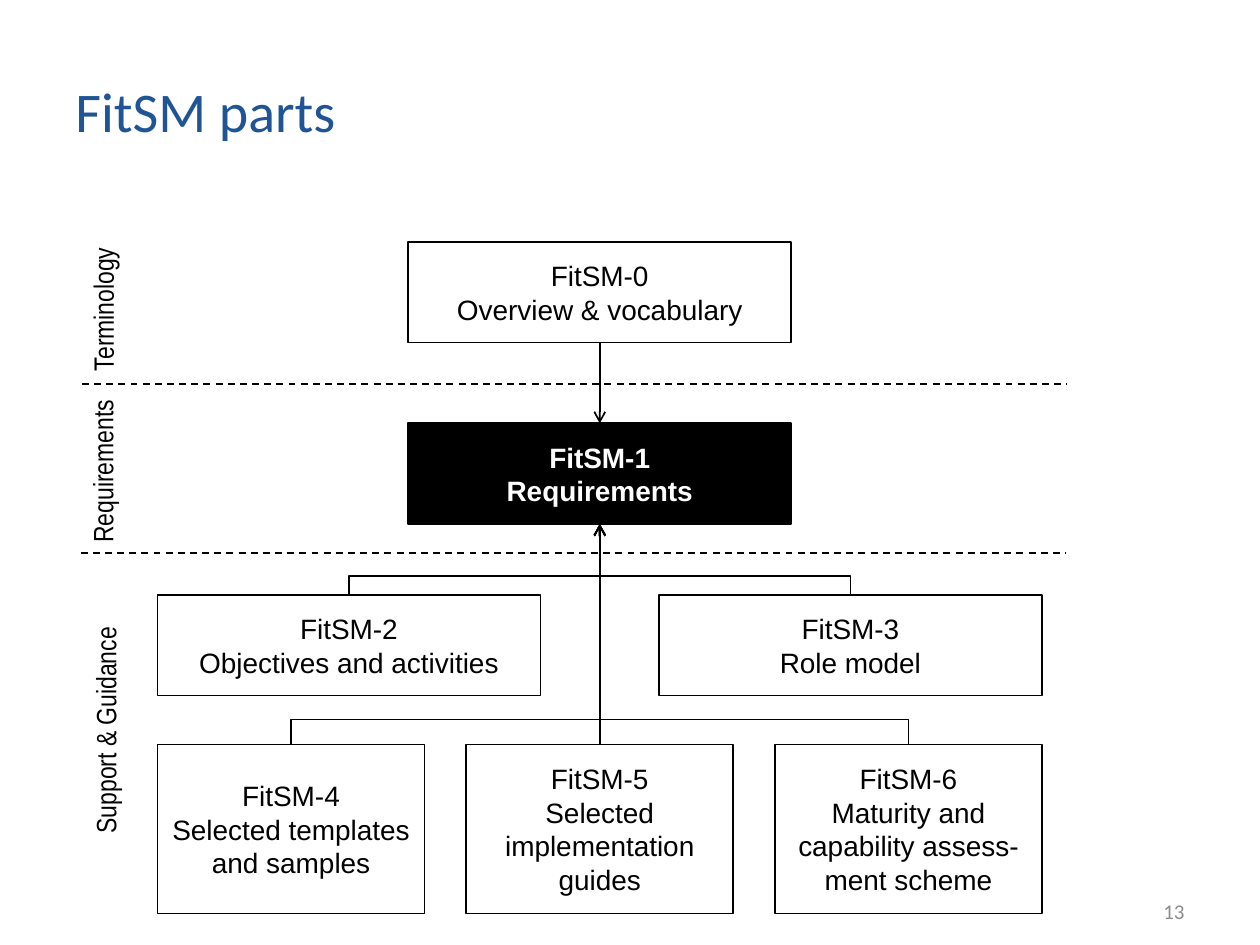
from dataclasses import dataclass

from lxml.etree import SubElement
from pptx import Presentation
from pptx.dml.color import RGBColor as Rgb
from pptx.enum.dml import MSO_LINE as Dash
from pptx.enum.shapes import MSO_CONNECTOR as Conn, MSO_SHAPE as Shape
from pptx.enum.text import MSO_ANCHOR as Anchor, PP_ALIGN as Align
from pptx.oxml.ns import qn
from pptx.util import Pt

TOP, BOTTOM = 0, 2  # connection sites of a rectangle


@dataclass(frozen=True)
class Theme:
    ink: str = "000000"
    paper: str = "FFFFFF"
    blue: str = "205595"
    gray: str = "8C8C8C"
    head: int = 32
    body: int = 16
    small: int = 12
    sans: str = "Arial"
    thin: str = "Arial Narrow"
    title: str = "Calibri"


T = Theme()


def px(n):
    """One px is a hundredth of an inch."""
    return round(n * 9144)


def write(shape, text, size=T.body, font=T.sans, color=T.ink, bold=False,
          align=Align.CENTER, wrap=True):
    frame = shape.text_frame
    frame.word_wrap = wrap
    frame.vertical_anchor = Anchor.MIDDLE
    frame.text = text
    for para in frame.paragraphs:
        para.alignment = align
        style = para.font
        style.size, style.name, style.bold = Pt(size), font, bold
        style.color.rgb = Rgb.from_string(color)


def label(slide, box, text, turn=0, **form):
    shape = slide.shapes.add_textbox(*map(px, box))
    shape.rotation = turn
    write(shape, text, **form)


def card(slide, box, text, dark=False):
    shape = slide.shapes.add_shape(Shape.RECTANGLE, *map(px, box))
    shape.shadow.inherit = False
    if dark:
        shape.fill.solid()
        shape.fill.fore_color.rgb = Rgb.from_string(T.ink)
    else:
        shape.fill.background()
    shape.line.color.rgb = Rgb.from_string(T.ink)
    shape.line.width = Pt(1)
    write(shape, text, color=T.paper if dark else T.ink, bold=dark)
    return shape


def row(slide, box, texts, wide):
    """Cards of equal width, spread evenly from edge to edge."""
    x, y, w, h = box
    step = (w - wide) // (len(texts) - 1)
    return [card(slide, (x + i * step, y, wide, h), text)
            for i, text in enumerate(texts)]


def side(slide, box, text, long):
    """A label that reads upward, centred in its box."""
    x, y, w, h = box
    high = 37
    spot = (x + (w - long) / 2, y + (h - high) / 2, long, high)
    label(slide, spot, text, turn=270, font=T.thin, wrap=False)


def line(slide, kind, ends=(0, 0, 0, 0)):
    wire = slide.shapes.add_connector(kind, *map(px, ends))
    wire.line.color.rgb = Rgb.from_string(T.ink)
    wire.line.width = Pt(1)
    SubElement(wire._element.spPr, qn("a:effectLst"))
    return wire


def rule(slide, x, y, w):
    line(slide, Conn.STRAIGHT, (x, y, x + w, y)).line.dash_style = Dash.DASH


def arrow(slide, start, out, end, into, kind=Conn.STRAIGHT):
    wire = line(slide, kind)
    wire.begin_connect(start, out)
    wire.end_connect(end, into)
    SubElement(wire.line._get_or_add_ln(), qn("a:tailEnd"), type="arrow")
    return wire


def elbow(slide, start, end, lift):
    """Rise by lift, cross to the middle of end, then rise to its base."""
    wire = arrow(slide, start, TOP, end, BOTTOM, Conn.ELBOW)
    x1, y1, x2, y2 = wire.begin_x, wire.begin_y, wire.end_x, wire.end_y
    long, across = y1 - y2, abs(x2 - x1)
    # The bent preset starts sideways, so its frame is turned
    wire.left = (x1 + x2 - long) // 2
    wire.top = (y1 + y2 - across) // 2
    wire.width, wire.height = long, across
    right = x1 < x2
    frame = wire._element.spPr.find(qn("a:xfrm"))
    frame.set("rot", str((90 if right else 270) * 60000))
    frame.set("flipH", str(int(right)))
    frame.set("flipV", "1")
    bend = wire._element.spPr.find(qn("a:prstGeom")).find(qn("a:avLst"))
    share = round(px(lift) / long * 100000)
    SubElement(bend, qn("a:gd"), name="adj1", fmla=f"val {share}")


def terms(slide, box):
    x, y, w, h = box
    side(slide, (x, y, 35, 107), "Terminology", 119)
    rule(slide, x + 1, y + h, w)
    return card(slide, (x + 260, y, 304, 80), "FitSM-0\nOverview & vocabulary")


def needs(slide, box):
    x, y, w, h = box
    side(slide, (x, y + 2, 34, h), "Requirements", 134)
    rule(slide, x, y + h, w)
    return card(slide, (x + 260, y + 31, 304, 80),
                "FitSM-1\nRequirements", dark=True)


def guides(slide, box, goal):
    x, y, w, h = box
    side(slide, (x, y, 39, 281), "Support & Guidance", 185)
    upper = row(slide, (x + 61, y + 33, 702, 80),
                ["FitSM-2\nObjectives and activities",
                 "FitSM-3\nRole model"], 304)
    left, mid, right = row(slide, (x + 61, y + 152, 702, h - 152),
                           ["FitSM-4\nSelected templates and samples",
                            "FitSM-5\nSelected implementation guides",
                            "FitSM-6\nMaturity and capability assess-ment scheme"],
                           212)
    for part in upper:
        elbow(slide, part, goal, 15)
    for part in (left, right):
        elbow(slide, part, goal, 20)
    arrow(slide, mid, TOP, goal, BOTTOM)


def main():
    deck = Presentation()
    deck.slide_width, deck.slide_height = px(1000), px(750)
    slide = deck.slides.add_slide(deck.slide_layouts[6])

    # Title and page number
    label(slide, (50, 30, 772, 115), "FitSM parts", size=T.head,
          font=T.title, color=T.blue, align=Align.LEFT)
    label(slide, (717, 703, 233, 40), "13", size=T.small,
          font=T.title, color=T.gray, align=Align.RIGHT)

    # Three bands, from top to bottom
    words = terms(slide, (64, 192, 782, 113))
    goal = needs(slide, (64, 305, 782, 134))
    arrow(slide, words, BOTTOM, goal, TOP)
    guides(slide, (64, 439, 782, 286), goal)

    deck.save("out.pptx")


if __name__ == "__main__":
    main()
